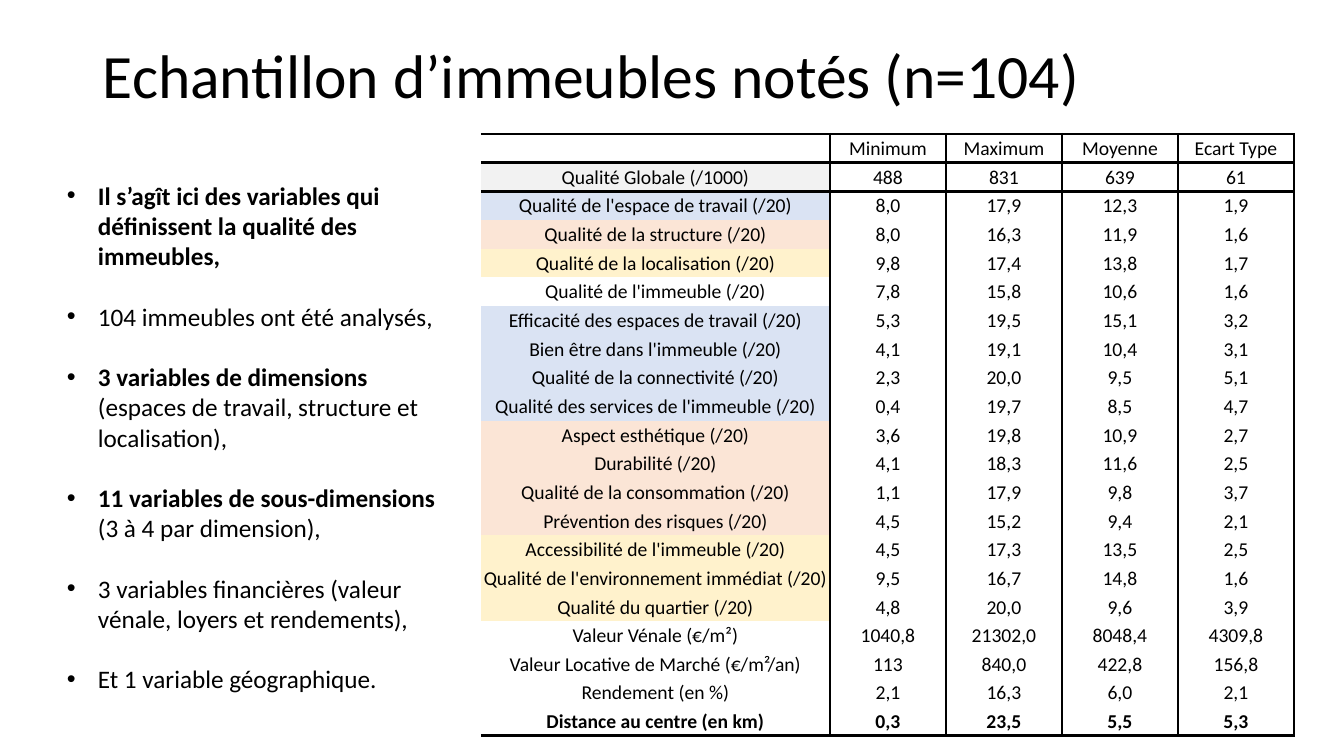
from lxml.etree import SubElement
from pptx import Presentation
from pptx.dml.color import RGBColor
from pptx.enum.text import MSO_ANCHOR as Anchor, PP_ALIGN as Align
from pptx.oxml.ns import qn
from pptx.util import Pt

EMU_PER_PX = 914400 / 100.8
BLACK, WHITE, GREY = "000000", "FFFFFF", "F2F2F2"
BLUE, ORANGE, YELLOW = "DAE3F3", "FBE5D6", "FFF2CC"
NO_STYLE = "{2D5ABB26-0587-4C30-8999-92F81FD0307C}"


def px(length):
    return round(length * EMU_PER_PX)


def style(font, size, bold=False):
    font.name = "Calibri"
    font.size = Pt(size)
    font.bold = bold
    font.color.rgb = RGBColor.from_string(BLACK)


deck = Presentation()
deck.slide_width, deck.slide_height = px(1344), px(756)
page = deck.slides.add_slide(deck.slide_layouts[6])

title = page.shapes.add_textbox(px(93), px(40), px(1159), px(146)).text_frame
title.word_wrap = True
para = title.paragraphs[0]
para.text = "Echantillon d’immeubles notés (n=104)"
para.line_spacing = 0.9
style(para.font, 44)

rows = [
    (WHITE, "", "Minimum", "Maximum", "Moyenne", "Ecart Type"),
    (GREY, "Qualité Globale (/1000)", "488", "831", "639", "61"),
    (BLUE, "Qualité de l'espace de travail (/20)", "8,0", "17,9", "12,3", "1,9"),
    (ORANGE, "Qualité de la structure (/20)", "8,0", "16,3", "11,9", "1,6"),
    (YELLOW, "Qualité de la localisation (/20)", "9,8", "17,4", "13,8", "1,7"),
    (WHITE, "Qualité de l'immeuble (/20)", "7,8", "15,8", "10,6", "1,6"),
    (BLUE, "Efficacité des espaces de travail (/20)", "5,3", "19,5", "15,1", "3,2"),
    (BLUE, "Bien être dans l'immeuble (/20)", "4,1", "19,1", "10,4", "3,1"),
    (BLUE, "Qualité de la connectivité (/20)", "2,3", "20,0", "9,5", "5,1"),
    (BLUE, "Qualité des services de l'immeuble (/20)", "0,4", "19,7", "8,5", "4,7"),
    (ORANGE, "Aspect esthétique (/20)", "3,6", "19,8", "10,9", "2,7"),
    (ORANGE, "Durabilité (/20)", "4,1", "18,3", "11,6", "2,5"),
    (ORANGE, "Qualité de la consommation (/20)", "1,1", "17,9", "9,8", "3,7"),
    (ORANGE, "Prévention des risques (/20)", "4,5", "15,2", "9,4", "2,1"),
    (YELLOW, "Accessibilité de l'immeuble (/20)", "4,5", "17,3", "13,5", "2,5"),
    (YELLOW, "Qualité de l'environnement immédiat (/20)", "9,5", "16,7", "14,8", "1,6"),
    (YELLOW, "Qualité du quartier (/20)", "4,8", "20,0", "9,6", "3,9"),
    (WHITE, "Valeur Vénale (€/m²)", "1040,8", "21302,0", "8048,4", "4309,8"),
    (WHITE, "Valeur Locative de Marché (€/m²/an)", "113", "840,0", "422,8", "156,8"),
    (WHITE, "Rendement (en %)", "2,1", "16,3", "6,0", "2,1"),
    (WHITE, "Distance au centre (en km)", "0,3", "23,5", "5,5", "5,3"),
]
last = len(rows) - 1
rules = {0: 2, 1: 2.25, 2: 2.25, len(rows): 2}

frame = page.shapes.add_table(len(rows), 5, px(481), px(134), px(813), px(602))
table = frame.table
table.first_row = table.horz_banding = False
table._tbl.tblPr.find(qn("a:tableStyleId")).text = NO_STYLE
for column, width in zip(table.columns, [349, 116, 116, 116, 116]):
    column.width = px(width)

for r, (tint, *texts) in enumerate(rows):
    table.rows[r].height = px(602) // len(rows)
    for c, text in enumerate(texts):
        cell = table.cell(r, c)
        cell.margin_left = cell.margin_right = cell.margin_top = px(1)
        cell.margin_bottom = 0
        cell.vertical_anchor = Anchor.MIDDLE
        para = cell.text_frame.paragraphs[0]
        para.text = text
        para.alignment = Align.CENTER
        style(para.font, 14, r == last)
        if not text:
            SubElement(para._p, qn("a:endParaRPr"), sz="1400")
        properties = cell._tc.get_or_add_tcPr()
        borders = {"L": 1 if c else 0, "R": 1, "T": rules.get(r, 0), "B": rules.get(r + 1, 0)}
        for side, weight in borders.items():
            line = SubElement(properties, qn(f"a:ln{side}"), w=str(Pt(weight)))
            if weight:
                fill = SubElement(line, qn("a:solidFill"))
                SubElement(fill, qn("a:srgbClr"), val=BLACK)
            else:
                SubElement(line, qn("a:noFill"))
        cell.fill.solid()
        cell.fill.fore_color.rgb = RGBColor.from_string(WHITE if c else tint)

bullets = [
    ("Il s’agît ici des variables qui définissent la qualité des immeubles,", ""),
    ("", "104 immeubles ont été analysés,"),
    ("3 variables de dimensions", " (espaces de travail, structure et localisation),"),
    ("11 variables de sous-dimensions ", "(3 à 4 par dimension),"),
    ("", "3 variables financières (valeur vénale, loyers et rendements),"),
    ("", "Et 1 variable géographique."),
]
box = page.shapes.add_textbox(px(57), px(175), px(398), px(529)).text_frame
box.word_wrap = True
for i, parts in enumerate(bullets):
    para = box.add_paragraph() if i else box.paragraphs[0]
    para.space_before = Pt(21.6 if i else 0)
    properties = para._p.get_or_add_pPr()
    properties.set("marL", str(px(31)))
    properties.set("indent", str(-px(31)))
    SubElement(properties, qn("a:buFont"), typeface="Arial")
    SubElement(properties, qn("a:buChar"), char="•")
    for text, bold in zip(parts, (True, False)):
        if text:
            span = para.add_run()
            span.text = text
            style(span.font, 18, bold)

deck.save("out.pptx")
